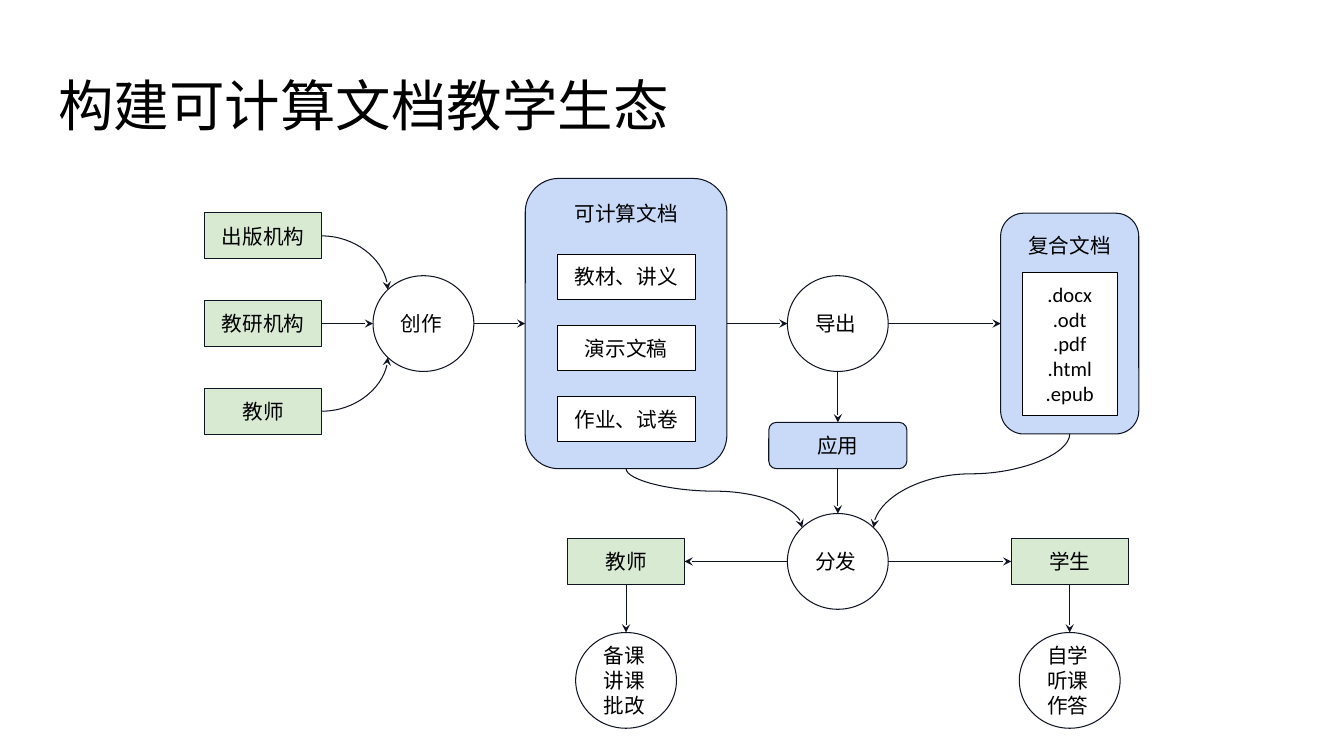
import pptx
import pptx.util
import pptx.dml.color
import pptx.enum.shapes
import pptx.enum.text
import pptx.oxml.ns
from lxml import etree

Inches = pptx.util.Inches
RGB = pptx.dml.color.RGBColor
KIND = pptx.enum.shapes.MSO_SHAPE
LINK = pptx.enum.shapes.MSO_CONNECTOR
ALIGN = pptx.enum.text.PP_ALIGN
ANCHOR = pptx.enum.text.MSO_ANCHOR
qn = pptx.oxml.ns.qn

BLACK = RGB(0x00, 0x00, 0x00)
WHITE = RGB(0xFF, 0xFF, 0xFF)
INK = RGB(0x0F, 0x14, 0x23)
GREEN = RGB(0xD9, 0xEA, 0xD3)
BLUE = RGB(0xC9, 0xDA, 0xF8)

# Content
TITLE = "构建可计算文档教学生态"

# Style: preset shape, width, height, fill, line colour, anchor, alignment
STYLES = {
    "role": (KIND.RECTANGLE, 1.16, 0.46, GREEN, INK, ANCHOR.MIDDLE, ALIGN.CENTER),
    "step": (KIND.OVAL, 1, 0.95, None, INK, ANCHOR.MIDDLE, ALIGN.LEFT),
    "group": (KIND.ROUNDED_RECTANGLE, 2, 2.88, BLUE, INK, ANCHOR.TOP, ALIGN.CENTER),
    "item": (KIND.RECTANGLE, 1.37, 0.45, WHITE, BLACK, ANCHOR.MIDDLE, ALIGN.CENTER),
    "bundle": (KIND.ROUNDED_RECTANGLE, 1.37, 2.19, BLUE, INK, ANCHOR.TOP, ALIGN.CENTER),
    "list": (KIND.RECTANGLE, 0.94, 1.42, WHITE, BLACK, ANCHOR.MIDDLE, ALIGN.CENTER),
    "app": (KIND.ROUNDED_RECTANGLE, 1.37, 0.46, BLUE, INK, ANCHOR.MIDDLE, ALIGN.CENTER),
}

# Centre lines of the diagram
X_ROLE, X_MAKE, X_DOC, X_OUT, X_END = 2.61, 4.2, 6.21, 8.31, 10.61
Y_MAIN, Y_APP, Y_SHARE, Y_USE = 3.21, 4.42, 5.57, 6.75
ROLE_GAP, ITEM_GAP = 0.87, 0.705

# Node: style, text, centre x, centre y
NODES = {
    "press": ("role", "出版机构", X_ROLE, Y_MAIN - ROLE_GAP),
    "lab": ("role", "教研机构", X_ROLE, Y_MAIN),
    "author": ("role", "教师", X_ROLE, Y_MAIN + ROLE_GAP),
    "make": ("step", "创作", X_MAKE, Y_MAIN),
    "doc": ("group", "可计算文档", X_DOC, Y_MAIN),
    "share": ("step", "分发", X_OUT, Y_SHARE),
    "teacher": ("role", "教师", X_DOC, Y_SHARE),
    "teach": ("step", "备课\n讲课\n批改", X_DOC, Y_USE),
    "student": ("role", "学生", X_END, Y_SHARE),
    "learn": ("step", "自学\n听课\n作答", X_END, Y_USE),
    "bundle": ("bundle", "复合文档", X_END, Y_MAIN),
    "types": ("list", ".docx\n.odt\n.pdf\n.html\n.epub", X_END, 3.41),
    "export": ("step", "导出", X_OUT, Y_MAIN),
    "app": ("app", "应用", X_OUT, Y_APP),
}
for row, label in enumerate(["教材、讲义", "演示文稿", "作业、试卷"]):
    NODES[label] = ("item", label, X_DOC, 3.45 + (row - 1) * ITEM_GAP)

# Straight arrows: from, side, to, side
TOP, LEFT, BOTTOM, RIGHT = range(4)
ARROWS = [
    ("lab", RIGHT, "make", LEFT),
    ("make", RIGHT, "doc", LEFT),
    ("doc", RIGHT, "export", LEFT),
    ("export", RIGHT, "bundle", LEFT),
    ("export", BOTTOM, "app", TOP),
    ("app", BOTTOM, "share", TOP),
    ("share", LEFT, "teacher", RIGHT),
    ("share", RIGHT, "student", LEFT),
    ("teacher", BOTTOM, "teach", TOP),
    ("student", BOTTOM, "learn", TOP),
]

# Curves: from, side, to, horizontal and vertical sign of the end, bend
CURVES = [
    ("press", RIGHT, "make", -1, -1, None),
    ("author", RIGHT, "make", -1, 1, None),
    ("doc", BOTTOM, "share", -1, -1, 38200),
    ("bundle", BOTTOM, "share", 1, -1, 42600),
]

deck = pptx.Presentation()
deck.slide_width, deck.slide_height = Inches(13.33), Inches(7.5)
slide = deck.slides.add_slide(deck.slide_layouts[6])
shapes = slide.shapes


def write(shape, text, size=14.7, anchor=ANCHOR.MIDDLE, align=ALIGN.CENTER, space=None):
    frame = shape.text_frame
    frame.word_wrap = True
    frame.vertical_anchor = anchor
    frame.margin_left = frame.margin_right = Inches(0.13)
    frame.margin_top = frame.margin_bottom = Inches(0.13)
    frame.text = text
    for para in frame.paragraphs:
        para.alignment = align
        para.line_spacing = space
        for run in para.runs:
            run.font.name = "Calibri"
            run.font.size = pptx.util.Pt(size)
            run.font.color.rgb = BLACK


def draw(style, text, x, y):
    kind, wide, high, fill, line, anchor, align = STYLES[style]
    shape = shapes.add_shape(kind, Inches(x - wide / 2), Inches(y - high / 2),
                             Inches(wide), Inches(high))
    shape.shadow.inherit = False
    if fill is None:
        shape.fill.background()
    else:
        shape.fill.solid()
        shape.fill.fore_color.rgb = fill
    shape.line.color.rgb = line
    shape.line.width = pptx.util.Pt(0.75)
    write(shape, text, anchor=anchor, align=align)
    return shape


def spot(name, across, down):
    """Point of a node, from -1 to 1 on each axis about its centre."""
    style, _, x, y = NODES[name]
    return x + across * STYLES[style][1] / 2, y + down * STYLES[style][2] / 2


def side(name, index):
    return spot(name, *[(0, -1), (-1, 0), (0, 1), (1, 0)][index])


def link(kind, start, end):
    line = shapes.add_connector(kind, *[Inches(v) for v in start + end])
    line.line.color.rgb = INK
    line.line.width = pptx.util.Pt(0.75)
    tail = etree.SubElement(line.line._get_or_add_ln(), qn("a:tailEnd"))
    tail.set("type", "stealth")
    etree.SubElement(line._element.spPr, qn("a:effectLst"))
    return line


# Title
title = shapes.add_textbox(Inches(0.45), Inches(0.65), Inches(12.42), Inches(0.84))
write(title, TITLE, size=39.6, anchor=ANCHOR.TOP, align=ALIGN.LEFT, space=0.9)

# Nodes
made = {name: draw(*node) for name, node in NODES.items()}

# Straight arrows, joined wherever they meet a rectangle
for head, out, goal, into in ARROWS:
    line = link(LINK.STRAIGHT, side(head, out), side(goal, into))
    if NODES[head][0] != "step":
        line.begin_connect(made[head], out)
    if NODES[goal][0] != "step":
        line.end_connect(made[goal], into)

# Curves, ending on the diagonal of a circle
DIAG = 0.707
for head, out, goal, across, down, bend in CURVES:
    (x1, y1), (x2, y2) = side(head, out), spot(goal, across * DIAG, down * DIAG)
    if bend is None:
        line = link(LINK.CURVE, (x1, y1), (x2, y2))
        line._element.spPr.prstGeom.set("prst", "curvedConnector2")
        continue
    # A curve that leaves downwards is a turned box with its sides swapped
    midx, midy = (x1 + x2) / 2, (y1 + y2) / 2
    wide, high = abs(y2 - y1) / 2, abs(x2 - x1) / 2
    line = link(LINK.CURVE, (midx - wide, midy - high), (midx + wide, midy + high))
    frame = line._element.spPr.find(qn("a:xfrm"))
    turn = 270 if x2 > x1 else 90
    frame.set("rot", str(turn * 60000))
    if turn == 270:
        frame.set("flipH", "1")
    guide = etree.SubElement(line._element.spPr.prstGeom.get_or_add_avLst(), qn("a:gd"))
    guide.set("name", "adj1")
    guide.set("fmla", f"val {bend}")

deck.save("out.pptx")
